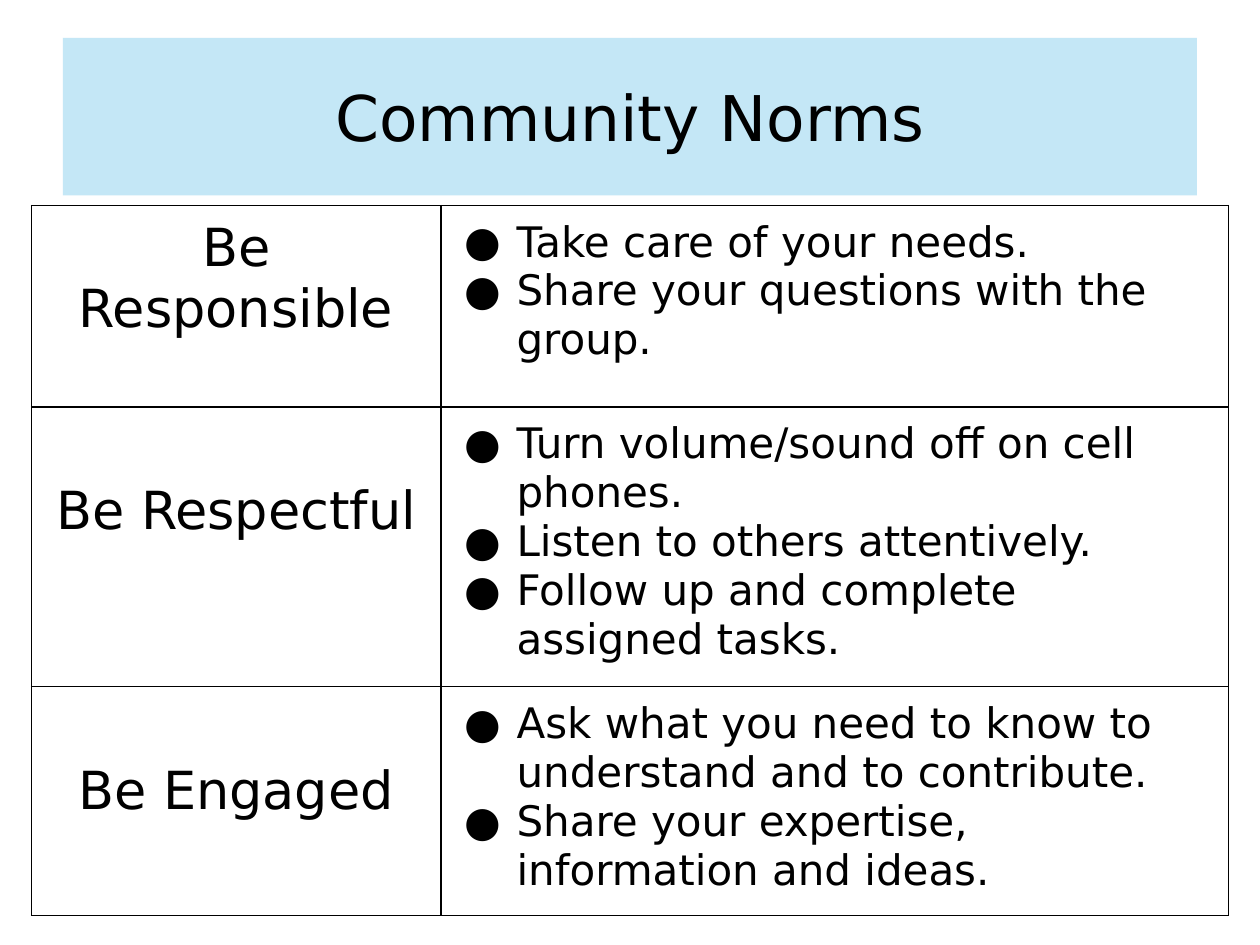
from lxml.etree import SubElement
from pptx import Presentation
from pptx.dml.color import RGBColor
from pptx.enum.shapes import MSO_SHAPE as Shape
from pptx.enum.text import MSO_ANCHOR as Anchor, PP_ALIGN as Align
from pptx.oxml.ns import qn
from pptx.util import Pt

FONT = "DejaVu Sans"
COLORS = {"banner": "A9DCF2", "ink": "000000", "paper": "FFFFFF"}
CELL_INSET = 7.2
HEADING_LINE = 35
COLUMN_WIDTHS = [234, 450]

# heading, heading lines to move down, row height, bullet points
NORMS = [
    ("Be Responsible", 0, 115.2, [
        "Take care of your needs.",
        "Share your questions with the group.",
    ]),
    ("Be Respectful", 1, 159.84, [
        "Turn volume/sound off on cell phones.",
        "Listen to others attentively.",
        "Follow up and complete assigned tasks.",
    ]),
    ("Be Engaged", 1, 131.04, [
        "Ask what you need to know to understand and to contribute.",
        "Share your expertise, information and ideas.",
    ]),
]


def color(name):
    return RGBColor.from_string(COLORS[name])


def write(para, text, size, align):
    para.text = text
    para.alignment = align
    para.font.name = FONT
    para.font.size = Pt(size)
    para.font.color.rgb = color("ink")


def add_bullet(para):
    props = para._p.get_or_add_pPr()
    props.set("marL", str(Pt(36)))
    props.set("indent", str(Pt(-30)))
    bullet_color = SubElement(props, qn("a:buClr"))
    SubElement(bullet_color, qn("a:srgbClr"), val=COLORS["ink"])
    SubElement(props, qn("a:buFont"), typeface=FONT)
    SubElement(props, qn("a:buChar"), char="●")


def add_borders(cell):
    """Draw all four edges; they must come before the cell's fill."""
    props = cell._tc.get_or_add_tcPr()
    for index, edge in enumerate(("lnL", "lnR", "lnT", "lnB")):
        line = SubElement(props, qn(f"a:{edge}"), w=str(Pt(0.75)))
        fill = SubElement(line, qn("a:solidFill"))
        SubElement(fill, qn("a:srgbClr"), val=COLORS["ink"])
        props.insert(index, line)


def style_cell(cell, lines_down=0):
    cell.margin_left = cell.margin_right = cell.margin_bottom = Pt(CELL_INSET)
    cell.margin_top = Pt(CELL_INSET + lines_down * HEADING_LINE)
    cell.vertical_anchor = Anchor.TOP
    cell.fill.solid()
    cell.fill.fore_color.rgb = color("paper")
    add_borders(cell)


def add_banner(page, text):
    banner = page.shapes.add_shape(
        Shape.RECTANGLE, Pt(36), Pt(21.6), Pt(648), Pt(90))
    banner.shadow.inherit = False
    banner.line.fill.background()
    banner.fill.solid()
    banner.fill.fore_color.rgb = color("banner")
    tint = banner._element.spPr.find(f".//{qn('a:srgbClr')}")
    SubElement(tint, qn("a:alpha"), val="68000")
    frame = banner.text_frame
    frame.word_wrap = True
    frame.vertical_anchor = Anchor.MIDDLE
    write(frame.paragraphs[0], text, 36, Align.CENTER)


def add_norms_table(page):
    height = sum(norm[2] for norm in NORMS)
    table = page.shapes.add_table(
        len(NORMS), len(COLUMN_WIDTHS), Pt(18), Pt(117.36),
        Pt(sum(COLUMN_WIDTHS)), Pt(height)).table
    table.first_row = table.horz_banding = False
    for column, width in zip(table.columns, COLUMN_WIDTHS):
        column.width = Pt(width)
    for row, (heading, lines_down, row_height, points) in zip(table.rows, NORMS):
        row.height = Pt(row_height)
        heading_cell, points_cell = row.cells
        style_cell(heading_cell, lines_down)
        write(heading_cell.text_frame.paragraphs[0], heading, 30, Align.CENTER)
        style_cell(points_cell)
        frame = points_cell.text_frame
        for index, point in enumerate(points):
            para = frame.add_paragraph() if index else frame.paragraphs[0]
            write(para, point, 24, Align.LEFT)
            add_bullet(para)


def main():
    deck = Presentation()
    deck.slide_width, deck.slide_height = Pt(720), Pt(540)
    page = deck.slides.add_slide(deck.slide_layouts[6])
    add_banner(page, "Community Norms")
    add_norms_table(page)
    deck.save("out.pptx")


if __name__ == "__main__":
    main()
